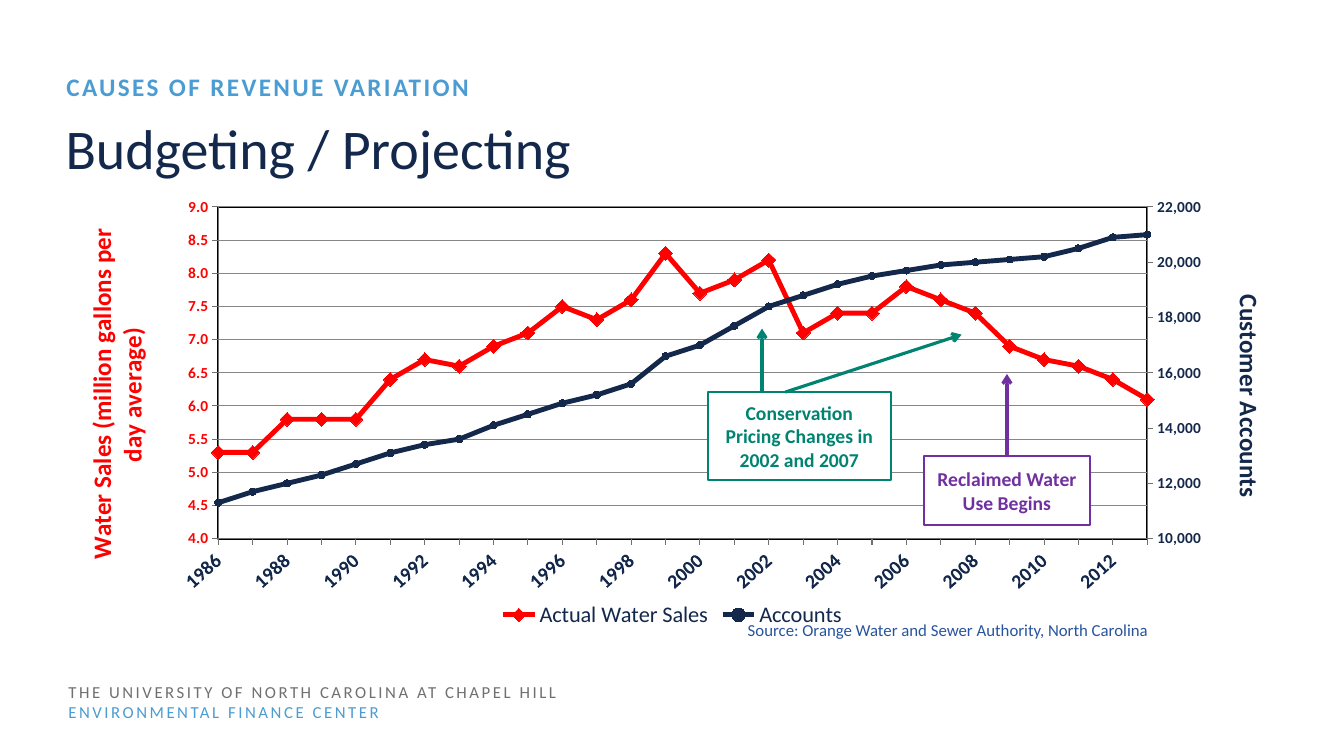
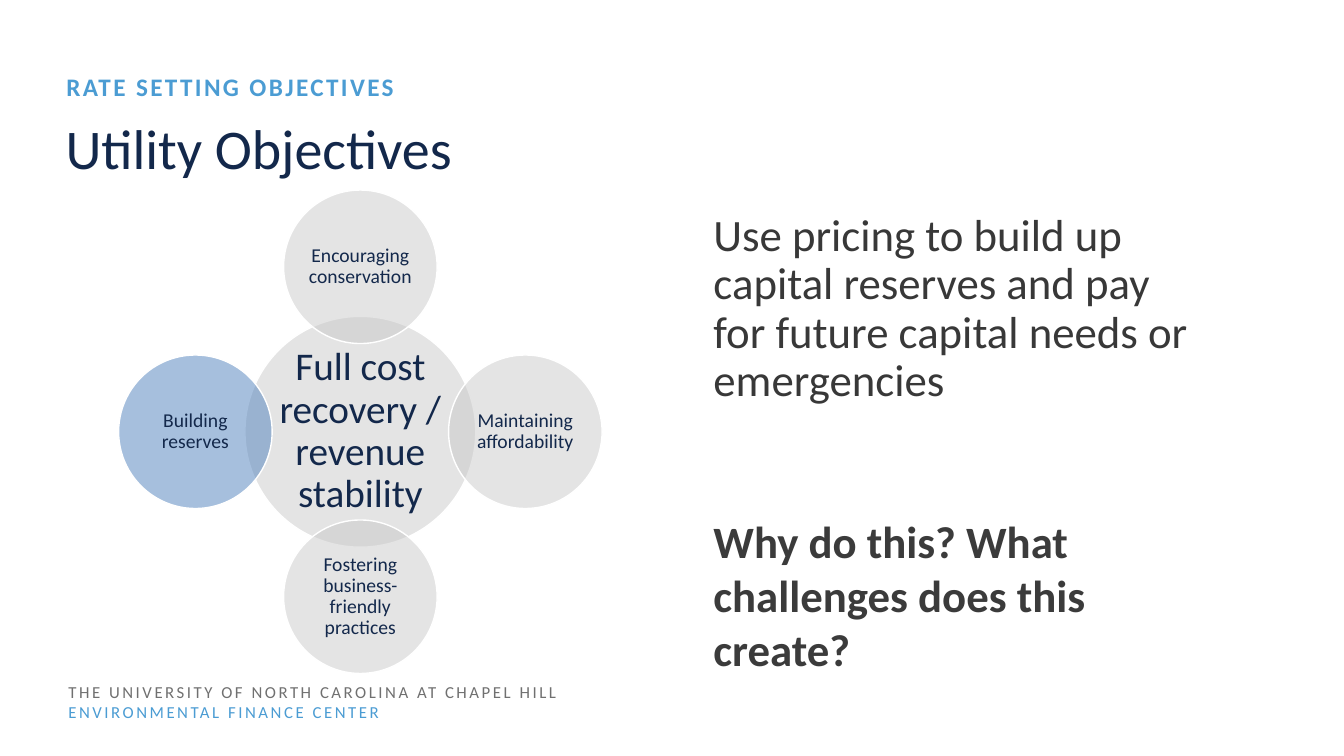
import copy
import dataclasses
import typing

import lxml.etree
import pptx
import pptx.chart.axis
import pptx.chart.data
import pptx.dml.color
import pptx.enum.chart
import pptx.enum.shapes
import pptx.enum.text
import pptx.oxml.ns
import pptx.util

COLS, ROWS = 80, 45
CELL = pptx.util.Inches(1) // 6
FONT = "Calibri"
NAVY, SKY, RED, GREEN, PURPLE = "13284B", "4B9CD3", "FF0000", "008370", "7030A0"
GRAY, BLACK, WHITE, SILVER, BLUE = "707070", "000000", "FFFFFF", "CACACA", "4F81BD"
ALIGN = pptx.enum.text.PP_ALIGN
ANCHOR = pptx.enum.text.MSO_ANCHOR
SHAPE = pptx.enum.shapes.MSO_SHAPE
MARKER = pptx.enum.chart.XL_MARKER_STYLE
qn = pptx.oxml.ns.qn


@dataclasses.dataclass(frozen=True)
class Area:
    col: float
    row: float
    cols: float
    rows: float

    def emu(self) -> list[int]:
        return [cells(n) for n in (self.col, self.row, self.cols, self.rows)]


@dataclasses.dataclass(frozen=True)
class Line:
    text: str
    size: float
    color: str = NAVY
    bold: bool = False
    spacing: float = 0
    leading: float = 1.0
    align: typing.Any = ALIGN.LEFT


@dataclasses.dataclass(frozen=True)
class Callout:
    text: str
    area: Area
    color: str


@dataclasses.dataclass(frozen=True)
class Arrow:
    start: tuple[float, float]
    end: tuple[float, float]
    color: str


@dataclasses.dataclass(frozen=True)
class Objective:
    text: str
    dx: float
    dy: float
    diameter: float = 9.14
    size: float = 14
    fill: str = SILVER


@dataclasses.dataclass(frozen=True)
class Series:
    name: str
    values: list
    color: str
    marker: typing.Any
    marker_size: int


TITLE = Area(3.3, 6.36, 73.44, 4.74)
EYEBROW = Area(3.36, 4.14, 73.44, 1.62)
FOOTER = Area(3.48, 40.26, 46.98, 3)
CHART = Area(3.3, 11.76, 73.44, 25.92)
PLOT = {"x": 0.13, "y": 0.015, "w": 0.75, "h": 0.77}
PLOT.update(x=0.132, w=0.753, h=0.767)

SALES = [5.3, 5.3, 5.8, 5.8, 5.8, 6.4, 6.7, 6.6, 6.9, 7.1, 7.5, 7.3, 7.6, 8.3, 7.7, 7.9, 8.2,
         7.1, 7.4, 7.4, 7.8, 7.6, 7.4, 6.9, 6.7, 6.6, 6.4, 6.1]
ACCOUNTS = [11300, 11700, 12000, 12300, 12700, 13100, 13400, 13600, 14100, 14500, 14900, 15200,
            15600, 16600, 17000, 17700, 18400, 18800, 19200, 19500, 19700, 19900, 20000, 20100,
            20200, 20500, 20900, 21000]
FIRST_YEAR, SPLIT = 1986, 2002 - 1986
SERIES = [
    Series("Actual Water Sales", SALES[:SPLIT + 1] + [None] * (len(SALES) - SPLIT - 1),
           RED, MARKER.DIAMOND, 10),
    Series("Series 2", [None] * SPLIT + SALES[SPLIT:], RED, MARKER.DIAMOND, 10),
    Series("Accounts", ACCOUNTS, NAVY, MARKER.CIRCLE, 5),
]
PRICING = Callout("Conservation Pricing Changes in 2002 and 2007",
                  Area(42.12, 23.34, 10.92, 5.22), GREEN)
RECLAIMED = Callout("Reclaimed Water Use Begins", Area(55.02, 27.12, 9.84, 4.14), PURPLE)
PRICING_ARROWS = [Arrow((45.36, 23.34), (45.36, 19.56), GREEN),
                  Arrow((46.74, 23.34), (57.24, 19.92), GREEN)]
RECLAIMED_ARROW = Arrow((59.94, 27.12), (59.94, 22.26), PURPLE)

HUB, ORBIT = (21.45, 25.7), 9.82
OBJECTIVES = [
    Objective("Full cost recovery / revenue stability", 0, 0, 13.74, 28),
    Objective("Encouraging conservation", 0, -1),
    Objective("Maintaining affordability", 1, 0),
    Objective("Fostering business-friendly practices", 0, 1),
    Objective("Building reserves", -1, 0, fill=BLUE),
]


def cells(n: float) -> int:
    return round(n * CELL)


def rgb(color: str) -> pptx.dml.color.RGBColor:
    return pptx.dml.color.RGBColor.from_string(color)


def apply(target, values: dict) -> None:
    for name, value in values.items():
        setattr(target, name, value)


def paint(fill, color: str) -> None:
    fill.solid()
    fill.fore_color.rgb = rgb(color)


def style_font(font, size: float, color: str = NAVY, bold: bool = False) -> None:
    apply(font, {"name": FONT, "size": pptx.util.Pt(size), "bold": bold})
    font.color.rgb = rgb(color)


def style_line(line, color: str, width: float) -> None:
    paint(line.fill, color)
    line.width = pptx.util.Pt(width)


def write(tf, lines: list[Line], anchor=ANCHOR.TOP, **frame) -> None:
    apply(tf, {"word_wrap": True, "auto_size": pptx.enum.text.MSO_AUTO_SIZE.NONE,
               "vertical_anchor": anchor, **frame})
    for i, line in enumerate(lines):
        p = tf.add_paragraph() if i else tf.paragraphs[0]
        apply(p, {"alignment": line.align, "line_spacing": line.leading})
        r = p.add_run()
        r.text = line.text
        style_font(r.font, line.size, line.color, line.bold)
        if line.spacing:
            r.font._element.set("spc", str(round(line.spacing * 100)))


def add_text(s, area: Area, lines: list[Line], anchor=ANCHOR.TOP) -> None:
    write(s.shapes.add_textbox(*area.emu()).text_frame, lines, anchor)


def add_base(prs, eyebrow: str, title: str):
    s = prs.slides.add_slide(prs.slide_layouts[5])
    sp = s.shapes.title
    apply(sp, dict(zip(("left", "top", "width", "height"), TITLE.emu())))
    write(sp.text_frame, [Line(title, 40)], ANCHOR.MIDDLE)
    add_text(s, EYEBROW, [Line(eyebrow, 18, SKY, True, 1.7, 0.9)])
    add_text(s, FOOTER, [
        Line("THE UNIVERSITY OF NORTH CAROLINA AT CHAPEL HILL", 12, GRAY, spacing=1.8),
        Line("ENVIRONMENTAL FINANCE CENTER", 12, SKY, spacing=1.8),
    ], ANCHOR.MIDDLE)
    return s


def add_shape(s, kind, area: Area, fill: str, border: str, width: float):
    sp = s.shapes.add_shape(kind, *area.emu())
    sp.shadow.inherit = False
    paint(sp.fill, fill)
    style_line(sp.line, border, width)
    return sp


def add_callout(s, callout: Callout):
    sp = add_shape(s, SHAPE.RECTANGLE, callout.area, WHITE, callout.color, 1.5)
    write(sp.text_frame, [Line(callout.text, 14, callout.color, True, align=ALIGN.CENTER)],
          ANCHOR.MIDDLE)
    return sp


def add_arrow(s, arrow: Arrow, source=None) -> None:
    cx = s.shapes.add_connector(pptx.enum.shapes.MSO_CONNECTOR.STRAIGHT,
                                *map(cells, arrow.start + arrow.end))
    if source is not None:
        cx.begin_connect(source, 0)
    style_line(cx.line, arrow.color, 2.25)
    add_xml(cx.line._get_or_add_ln(), "a:tailEnd", type="arrow")
    add_xml(cx._element.spPr, "a:effectLst")


def add_objective(s, item: Objective) -> None:
    d = item.diameter
    area = Area(HUB[0] + item.dx * ORBIT - d / 2, HUB[1] + item.dy * ORBIT - d / 2, d, d)
    sp = add_shape(s, SHAPE.OVAL, area, item.fill, WHITE, 1)
    add_xml(sp._element.spPr.find(qn("a:solidFill"))[0], "a:alpha", val="50000")
    margins = {f"margin_{side}": 0 for side in ("left", "top", "right", "bottom")}
    write(sp.text_frame, [Line(item.text, item.size, leading=0.9, align=ALIGN.CENTER)],
          ANCHOR.MIDDLE, **margins)


def add_xml(parent, tag: str, **attrs: str):
    return lxml.etree.SubElement(parent, qn(tag), attrs)


def add_xml_after(sibling, tag: str, **attrs: str):
    el = add_xml(sibling.getparent(), tag, **attrs)
    sibling.addnext(el)
    return el


def style_value_axis(el, title: str, color: str, low: float, high: float, step: float,
                     number_format: str, rotation: int) -> None:
    axis = pptx.chart.axis.ValueAxis(el)
    apply(axis, {"minimum_scale": low, "maximum_scale": high, "major_unit": step,
                 "major_tick_mark": pptx.enum.chart.XL_TICK_MARK.OUTSIDE})
    apply(axis.tick_labels, {"number_format": number_format, "number_format_is_linked": False})
    style_font(axis.tick_labels.font, 11, color, True)
    style_line(axis.format.line, GRAY, 0.75)
    tf = axis.axis_title.text_frame
    r = tf.paragraphs[0].add_run()
    r.text = title
    style_font(r.font, 18, color, True)
    apply_xml = {"rot": str(rotation * 60000), "vert": "horz"}
    tf._txBody.bodyPr.attrib.update(apply_xml)


def style_category_axis(axis) -> None:
    axis.major_tick_mark = pptx.enum.chart.XL_TICK_MARK.OUTSIDE
    style_font(axis.tick_labels.font, 14, NAVY, True)
    style_line(axis.format.line, GRAY, 0.75)
    el = axis._element
    el.find(qn("c:txPr")).find(qn("a:bodyPr")).set("rot", str(-42 * 60000))
    add_xml_after(el.find(qn("c:lblOffset")), "c:tickLblSkip", val="2")


def split_axes(plot_area) -> tuple:
    left_plot, cat, left = (plot_area.find(qn(t)) for t in ("c:lineChart", "c:catAx", "c:valAx"))
    for el in left.findall(qn("c:crossBetween")):
        left.remove(el)
    add_xml_after(left.find(qn("c:crosses")), "c:crossBetween", val="midCat")
    right_plot, hidden, right = (copy.deepcopy(el) for el in (left_plot, cat, left))
    for plot, kept in ((left_plot, slice(0, 2)), (right_plot, slice(2, 3))):
        series = plot.findall(qn("c:ser"))
        for ser in series:
            if ser not in series[kept]:
                plot.remove(ser)
    ids = ("50010", "50020")
    for el, val in zip(right_plot.findall(qn("c:axId")), ids):
        el.set("val", val)
    for axis, own, other in ((hidden, *ids), (right, *reversed(ids))):
        axis.find(qn("c:axId")).set("val", own)
        axis.find(qn("c:crossAx")).set("val", other)
    right.find(qn("c:crosses")).set("val", "max")
    right.find(qn("c:axPos")).set("val", "r")
    pptx.chart.axis.ValueAxis(right).has_major_gridlines = False
    pptx.chart.axis.CategoryAxis(hidden).visible = False
    left_plot.addnext(right_plot)
    left.addnext(right)
    right.addnext(hidden)
    return left, right, hidden


def add_sales_chart(s) -> None:
    data = pptx.chart.data.CategoryChartData()
    data.categories = [str(FIRST_YEAR + i) for i in range(len(SALES))]
    for item in SERIES:
        data.add_series(item.name, item.values)
    chart = s.shapes.add_chart(pptx.enum.chart.XL_CHART_TYPE.LINE_MARKERS,
                               *CHART.emu(), data).chart
    apply(chart, {"has_title": False, "has_legend": True})
    style_font(chart.font, 10)
    chart.plots[0].vary_by_categories = False
    for ser, item in zip(chart.plots[0].series, SERIES):
        ser.smooth = False
        style_line(ser.format.line, item.color, 3.5)
        apply(ser.marker, {"style": item.marker, "size": item.marker_size})
        paint(ser.marker.format.fill, item.color)
        style_line(ser.marker.format.line, item.color, 0.75)

    apply(chart.legend, {"position": pptx.enum.chart.XL_LEGEND_POSITION.BOTTOM,
                         "include_in_layout": False})
    style_font(chart.legend.font, 16)
    entry = add_xml_after(chart.legend._element.find(qn("c:legendPos")), "c:legendEntry")
    add_xml(entry, "c:idx", val="1")
    add_xml(entry, "c:delete", val="1")

    plot_area = chart.plots[0]._element.getparent()
    left, right, hidden = split_axes(plot_area)
    style_category_axis(chart.category_axis)
    style_line(chart.value_axis.major_gridlines.format.line, "868686", 0.75)
    style_value_axis(left, "Water Sales (million gallons per day average)", RED,
                     4, 9, 0.5, "#,##0.0", -90)
    style_value_axis(right, "Customer Accounts", NAVY, 10000, 22000, 2000, "#,##0", 90)

    for el in plot_area.findall(qn("c:layout")):
        plot_area.remove(el)
    layout = lxml.etree.Element(qn("c:layout"))
    plot_area.insert(0, layout)
    manual = add_xml(layout, "c:manualLayout")
    add_xml(manual, "c:layoutTarget", val="inner")
    for side in "xy":
        add_xml(manual, f"c:{side}Mode", val="edge")
    for side, share in PLOT.items():
        add_xml(manual, f"c:{side}", val=str(share))
    border = add_xml(add_xml_after(hidden, "c:spPr"), "a:ln", w=str(pptx.util.Pt(1.5)))
    add_xml(add_xml(border, "a:solidFill"), "a:srgbClr", val=BLACK)


def build_budgeting(prs) -> None:
    s = add_base(prs, "CAUSES OF REVENUE VARIATION", "Budgeting / Projecting")
    add_sales_chart(s)
    add_text(s, Area(43.92, 36.6, 30.84, 1.8),
             [Line("Source: Orange Water and Sewer Authority, North Carolina", 12, "28549E")])
    add_arrow(s, RECLAIMED_ARROW, add_callout(s, RECLAIMED))
    add_callout(s, PRICING)
    for arrow in PRICING_ARROWS:
        add_arrow(s, arrow)


def build_objectives(prs) -> None:
    s = add_base(prs, "RATE SETTING OBJECTIVES", "Utility Objectives")
    add_text(s, Area(41.88, 12.36, 30.36, 26.46),
             [Line("Use pricing to build up capital reserves and pay for future capital needs "
                   "or emergencies", 32, "383838", leading=0.9)])
    add_text(s, Area(41.88, 30.3, 30.36, 10.32),
             [Line("Why do this? What challenges does this create?", 32, "3B3B3B", True)])
    for item in OBJECTIVES:
        add_objective(s, item)


def main() -> None:
    prs = pptx.Presentation()
    apply(prs, {"slide_width": cells(COLS), "slide_height": cells(ROWS)})
    build_budgeting(prs)
    build_objectives(prs)
    prs.save("out.pptx")


if __name__ == "__main__":
    main()
